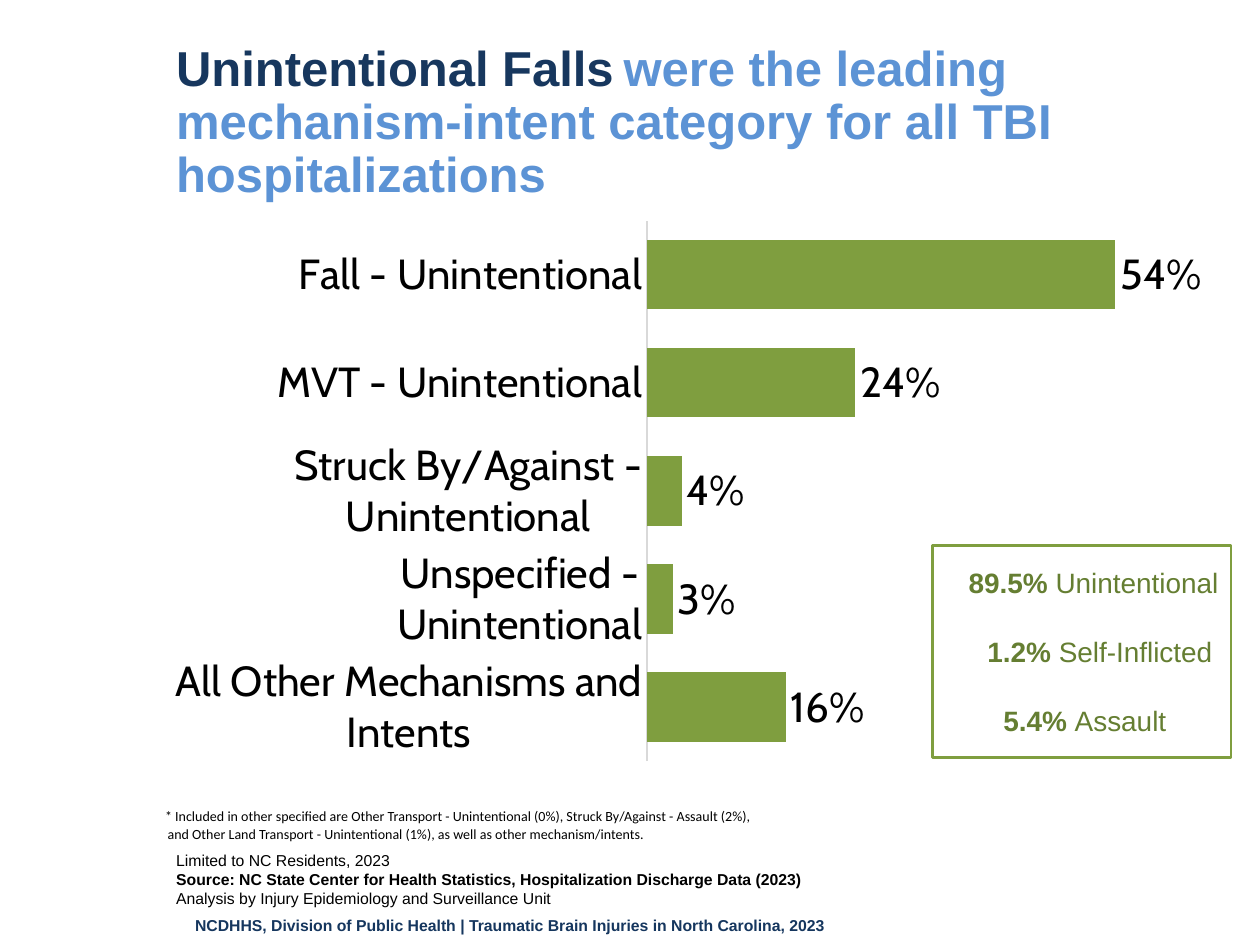
from dataclasses import dataclass

from pptx import Presentation
from pptx.chart.data import CategoryChartData
from pptx.dml.color import RGBColor
from pptx.enum.chart import XL_CHART_TYPE as ChartType
from pptx.enum.chart import XL_LABEL_POSITION as LabelPosition
from pptx.enum.chart import XL_TICK_MARK as TickMark
from pptx.enum.shapes import MSO_SHAPE as ShapeKind
from pptx.enum.text import MSO_ANCHOR as Anchor
from pptx.enum.text import PP_ALIGN as Align
from pptx.oxml import parse_xml
from pptx.oxml.ns import nsdecls
from pptx.util import Inches, Pt

NAVY, BLUE, GREEN, OLIVE = "17375E", "5C93D5", "7F9E3F", "657E32"
BLACK, WHITE, GRAY = "000000", "FFFFFF", "D9D9D9"


@dataclass
class Line:
    text: str
    bold: bool = False


@dataclass
class Share:
    value: str
    intent: str
    align: Align
    indent: float = 0


SHARES = [
    Share("89.5%", "Unintentional", Align.RIGHT),
    Share("1.2%", "Self-Inflicted", Align.CENTER, 0.29),
    Share("5.4%", "Assault", Align.CENTER, 0.05),
]
MECHANISMS = {
    "Fall - Unintentional": 54,
    "MVT - Unintentional": 24,
    "Struck By/Against - Unintentional": 4,
    "Unspecified - Unintentional": 3,
    "All Other Mechanisms and Intents": 16,
}
NOTES = [
    "* Included in other specified are Other Transport - Unintentional (0%), Struck By/Against - Assault (2%),",
    "and Other Land Transport - Unintentional (1%), as well as other mechanism/intents.",
]
SOURCES = [
    Line("Limited to NC Residents, 2023"),
    Line("Source: NC State Center for Health Statistics, Hospitalization Discharge Data (2023)", True),
    Line("Analysis by Injury Epidemiology and Surveillance Unit"),
]
FOOTER = [Line("NCDHHS, Division of Public Health | Traumatic Brain Injuries in North Carolina, 2023", True)]


def color(value: str) -> RGBColor:
    return RGBColor.from_string(value)


def set_font(font, size: float, tint: str, name: str = "Arial") -> None:
    font.name, font.size = name, Pt(size)
    font.color.rgb = color(tint)


def add_box(page, left: float, top: float, width: float, height: float):
    box = page.shapes.add_textbox(Inches(left), Inches(top), Inches(width), Inches(height))
    box.text_frame.word_wrap = True
    return box.text_frame


def add_lines(frame, lines: list[Line], size: float, tint: str) -> None:
    for index, line in enumerate(lines):
        para = frame.add_paragraph() if index else frame.paragraphs[0]
        para.text = line.text
        set_font(para.font, size, tint)
        para.font.bold = line.bold


def add_title(page) -> None:
    para = add_box(page, 1.3, 0.3, 8.6, 0.6).paragraphs[0]
    para.line_spacing = 0.9
    para.font.name, para.font.bold = "Arial", True
    for text, size, tint in [
        ("Unintentional Falls", 28, NAVY),
        (" ", 20, BLUE),
        ("were the leading mechanism-intent category for all TBI hospitalizations", 28, BLUE),
    ]:
        span = para.add_run()
        span.text = text
        span.font.size = Pt(size)
        span.font.color.rgb = color(tint)


def add_shares(page) -> None:
    box = page.shapes.add_shape(ShapeKind.RECTANGLE, Inches(7.4), Inches(4.33), Inches(2.37), Inches(1.68))
    box.shadow.inherit = False
    box.fill.background()
    box.line.color.rgb = color(GREEN)
    box.line.width = Pt(1.5)
    frame = box.text_frame
    frame.word_wrap = True
    frame.vertical_anchor = Anchor.MIDDLE
    for index, share in enumerate(SHARES):
        para = frame.add_paragraph() if index else frame.paragraphs[0]
        para.alignment = share.align
        if index:
            para.space_before = Pt(20)
        para._p.get_or_add_pPr().set("marL", str(Inches(share.indent)))
        set_font(para.font, 16, OLIVE)
        for text, bold in [(share.value + " ", True), (share.intent, False)]:
            span = para.add_run()
            span.text = text
            span.font.bold = bold


def add_mechanism_chart(page) -> None:
    data = CategoryChartData()
    data.categories = list(MECHANISMS)
    data.add_series("Series 1", list(MECHANISMS.values()))
    chart = page.shapes.add_chart(
        ChartType.BAR_CLUSTERED, Inches(1.36), Inches(1.62), Inches(8.18), Inches(4.54), data
    ).chart
    chart.has_legend = chart.has_title = False
    set_font(chart.font, 10, BLACK)

    categories = chart.category_axis
    categories.reverse_order = True
    categories.major_tick_mark = categories.minor_tick_mark = TickMark.NONE
    categories.format.line.color.rgb = color(GRAY)
    categories.format.line.width = Pt(0.75)
    set_font(categories.tick_labels.font, 24, BLACK, "Cabin")

    values = chart.value_axis
    values.minimum_scale, values.maximum_scale = 0, 60
    values.has_major_gridlines = False
    values.visible = False

    plot = chart.plots[0]
    plot.gap_width = 56
    plot.vary_by_categories = False
    series = plot.series[0]
    series.format.fill.solid()
    series.format.fill.fore_color.rgb = color(GREEN)
    labels = series.data_labels
    labels.show_value = True
    labels.position = LabelPosition.OUTSIDE_END
    labels.number_format, labels.number_format_is_linked = '0"%"', False
    set_font(labels.font, 24, BLACK, "Cabin")

    area = chart._chartSpace.chart.plotArea
    for layout in area.findall("{*}layout"):
        area.remove(layout)
    area.insert(0, parse_xml(
        f'<c:layout {nsdecls("c")}><c:manualLayout><c:layoutTarget val="inner"/>'
        '<c:xMode val="edge"/><c:yMode val="edge"/><c:x val="0.462"/><c:y val="0.029"/>'
        '<c:w val="0.506"/><c:h val="0.945"/></c:manualLayout></c:layout>'
    ))


def add_notes_table(page) -> None:
    table = page.shapes.add_table(
        len(NOTES), 1, Inches(1.3), Inches(6.4), Inches(5.53), Inches(0.28)
    ).table
    table.first_row = table.horz_banding = False
    for index, note in enumerate(NOTES):
        cell = table.cell(index, 0)
        cell.fill.background()
        cell.vertical_anchor = Anchor.BOTTOM
        cell.margin_left = Inches(0.01 + 0.02 * index)
        cell.margin_right = cell.margin_top = Inches(0.01)
        cell.margin_bottom = 0
        para = cell.text_frame.paragraphs[0]
        para.text = note
        set_font(para.font, 8, BLACK, "Calibri")


def main() -> None:
    deck = Presentation()
    deck.slide_width, deck.slide_height = Inches(10), Inches(7.5)
    page = deck.slides.add_slide(deck.slide_layouts[6])
    page.background.fill.solid()
    page.background.fill.fore_color.rgb = color(WHITE)
    add_lines(add_box(page, 1.45, 7.22, 8.74, 0.29), FOOTER, 9, "15365E")
    add_title(page)
    add_shares(page)
    add_mechanism_chart(page)
    add_notes_table(page)
    add_lines(add_box(page, 1.3, 6.7, 7.49, 0.56), SOURCES, 9, BLACK)
    deck.save("out.pptx")


if __name__ == "__main__":
    main()
